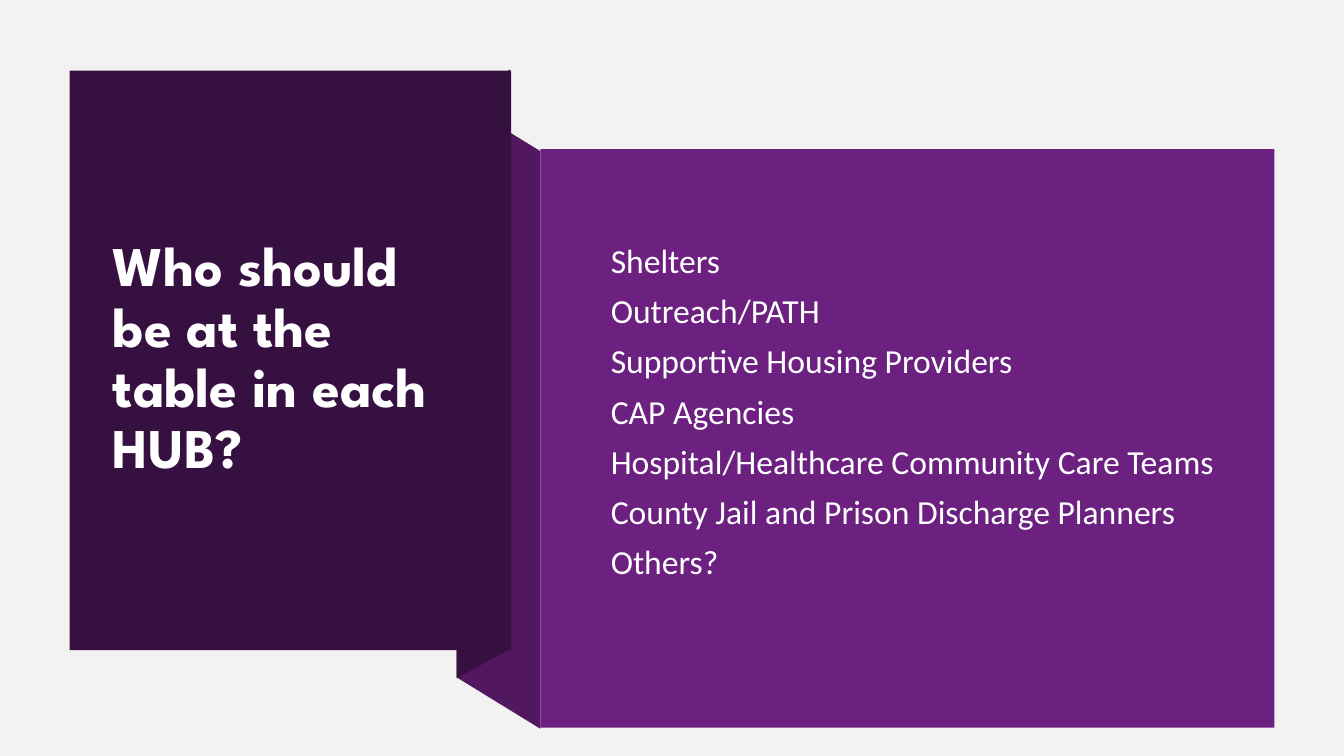
"""Build a slide with a folded purple ribbon, a title and a list of partners."""
from dataclasses import dataclass

from pptx import Presentation
from pptx.dml.color import RGBColor
from pptx.enum.shapes import MSO_SHAPE
from pptx.enum.text import MSO_ANCHOR, MSO_AUTO_SIZE, PP_ALIGN
from pptx.util import Inches, Pt

RECT = MSO_SHAPE.RECTANGLE
MIDDLE = MSO_ANCHOR.MIDDLE
NO_FIT = MSO_AUTO_SIZE.NONE
LEFT = PP_ALIGN.LEFT
TITLE_ONLY = 5

COLORS = {
    "back": "F2F2F2",
    "dark": "361040",
    "fold": "511860",
    "main": "6C2080",
    "title": "FFFFFF",
    "list": "FEFFFF",
}
TITLE = "Who should be at the table in each HUB?"
PARTNERS = [
    "Shelters",
    "Outreach/PATH",
    "Supportive Housing Providers",
    "CAP Agencies",
    "Hospital/Healthcare Community Care Teams",
    "County Jail and Prison Discharge Planners",
    "Others?",
]


@dataclass
class Fold:
    """A four-sided piece of ribbon."""
    points: list[tuple[float, float]]
    color: str


@dataclass
class Panel:
    """A flat rectangle."""
    left: float
    top: float
    width: float
    height: float
    color: str


@dataclass
class Style:
    """The look of a block of text."""
    font: str
    size: int
    color: str
    bold: bool
    gap: int


FOLDS = [
    Fold([(5.36, 7.23), (4.53, 6.72), (4.53, 0.99), (5.36, 1.5)], "fold"),
    Fold([(5.06, 6.44), (4.53, 6.73), (4.53, 0.98), (5.06, 0.69)], "dark"),
]
PANELS = [
    Panel(0.69, 0.7, 4.38, 5.75, "dark"),
    Panel(5.36, 1.48, 7.28, 5.74, "main"),
]
HEAD = Style("League Spartan", 40, "title", True, 0)
ITEM = Style("Calibri", 24, "list", False, 10)


def get_color(name: str) -> RGBColor:
    """Return the named color."""
    return RGBColor.from_string(COLORS[name])


def paint(shape, color: str) -> None:
    """Give a shape a plain fill with no line or shadow."""
    shape.shadow.inherit = False
    shape.fill.solid()
    shape.fill.fore_color.rgb = get_color(color)
    shape.line.fill.background()


def draw_fold(slide, fold: Fold) -> None:
    """Draw one folded piece."""
    start, *rest = [(Inches(x), Inches(y)) for x, y in fold.points]
    pen = slide.shapes.build_freeform(*start)
    pen.add_line_segments(rest, close=True)
    paint(pen.convert_to_shape(), fold.color)


def draw_panel(slide, panel: Panel) -> None:
    """Draw one flat panel."""
    box = map(Inches, (panel.left, panel.top, panel.width, panel.height))
    paint(slide.shapes.add_shape(RECT, *box), panel.color)


def write(shape, lines: list[str], style: Style) -> None:
    """Fill a shape with styled lines, one paragraph each."""
    frame = shape.text_frame
    frame.text = "\n".join(lines)
    frame.word_wrap = True
    frame.auto_size = NO_FIT
    frame.vertical_anchor = MIDDLE
    for index, para in enumerate(frame.paragraphs):
        para.alignment = LEFT
        para.line_spacing = 0.9
        para.space_before = Pt(style.gap if index else 0)
        for run in para.runs:
            run.font.name = style.font
            run.font.size = Pt(style.size)
            run.font.bold = style.bold
            run.font.color.rgb = get_color(style.color)


def main() -> None:
    """Build and save the slide."""
    deck = Presentation()
    deck.slide_width, deck.slide_height = Inches(13.33), Inches(7.5)
    slide = deck.slides.add_slide(deck.slide_layouts[TITLE_ONLY])
    slide.background.fill.solid()
    slide.background.fill.fore_color.rgb = get_color("back")
    for fold in FOLDS:
        draw_fold(slide, fold)
    for panel in PANELS:
        draw_panel(slide, panel)

    title = slide.shapes.title
    title.left, title.top = Inches(1.02), Inches(1.07)
    title.width, title.height = Inches(3.71), Inches(4.99)
    title.element.getparent().append(title.element)
    write(title, [TITLE], HEAD)

    box = map(Inches, (5.96, 1.73, 6.26, 4.74))
    write(slide.shapes.add_textbox(*box), PARTNERS, ITEM)
    deck.save("out.pptx")


if __name__ == "__main__":
    main()
